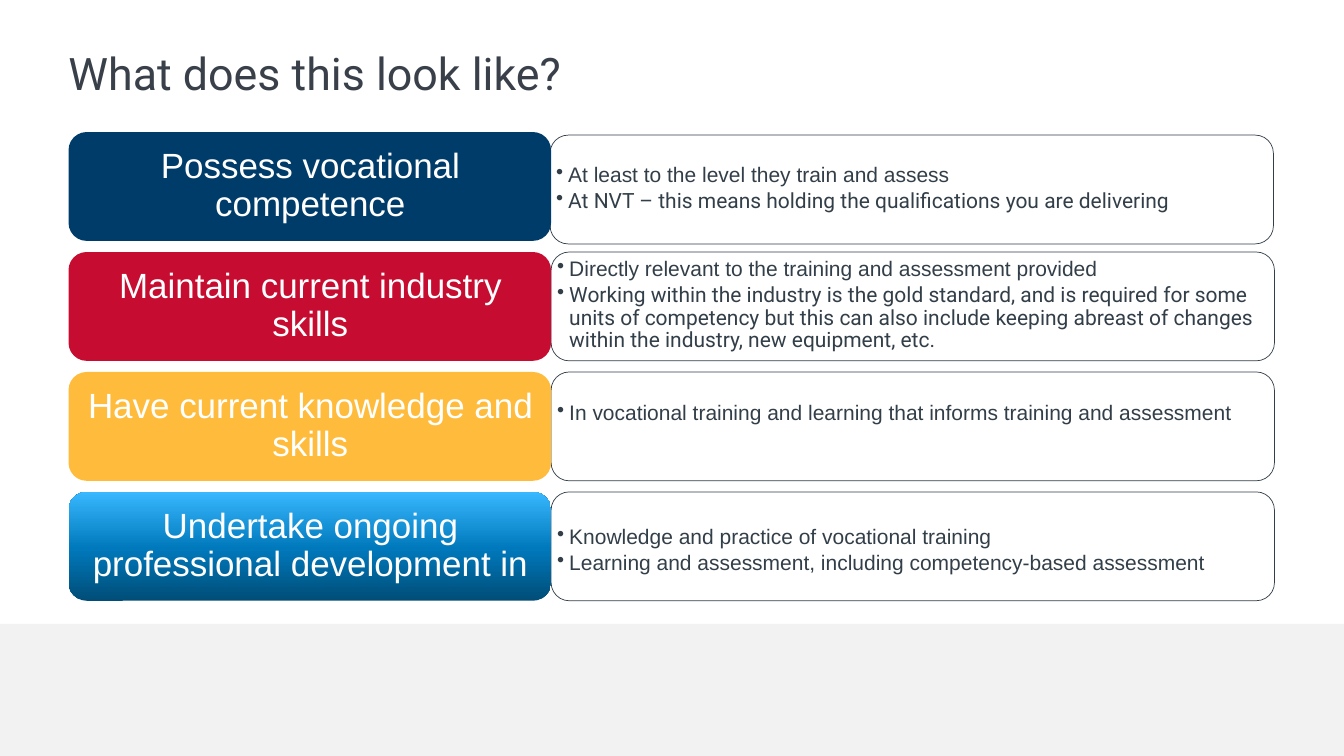
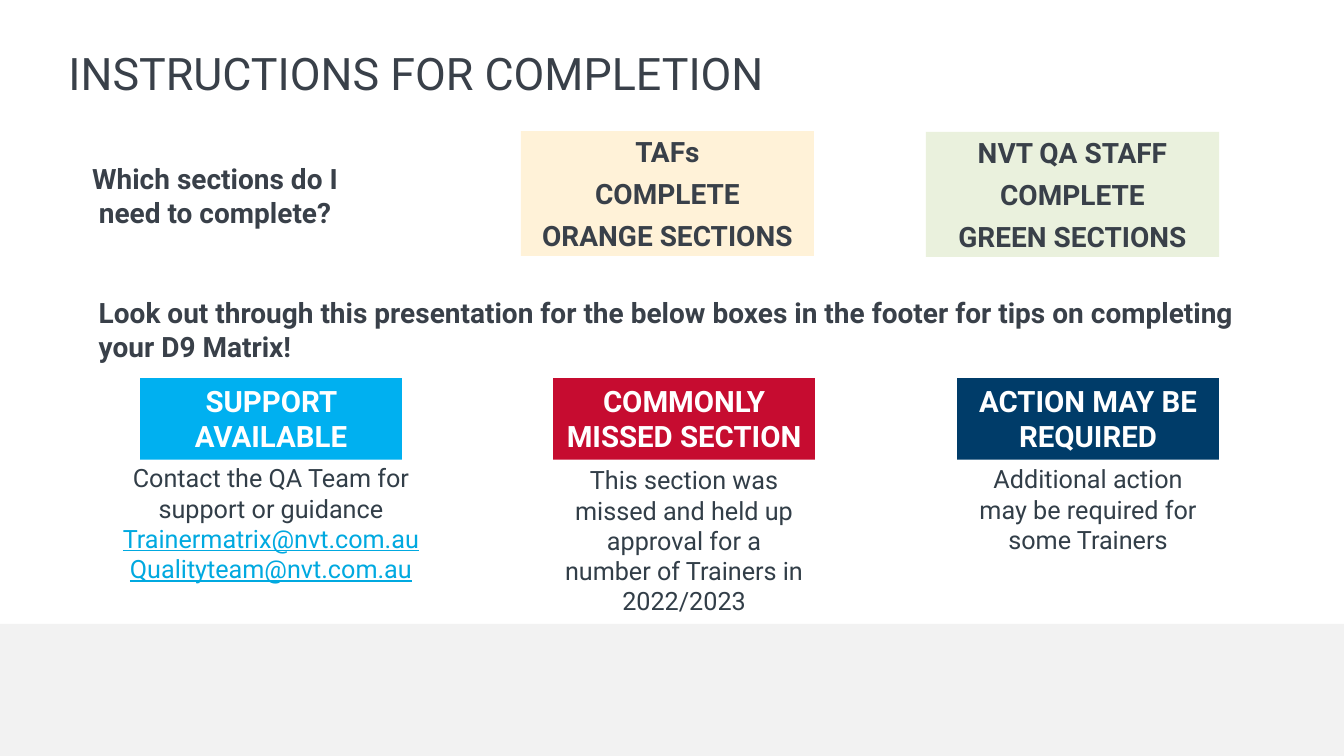
from lxml import etree
from pptx import Presentation
from pptx.dml.color import RGBColor
from pptx.enum import shapes, text
from pptx.oxml.ns import qn
from pptx.util import Inches, Pt

COLORS = {
    "ink": "394049", "body": "323E48", "white": "FFFFFF", "band": "F2F2F2",
    "navy": "003C69", "red": "C60C30", "amber": "FFBC3C", "sky": "00B0F0",
    "link": "00A9E0", "cream": "FFF2D8", "mint": "EAF1DD",
}
BLUE_STOPS = [(0, "004D77"), (48, "0079BC"), (100, "38B8FF")]
SANS, ROBOTO = "Arial", "Roboto"
RECT, ROUNDED = shapes.MSO_SHAPE.RECTANGLE, shapes.MSO_SHAPE.ROUNDED_RECTANGLE
TOP, MIDDLE, BOTTOM = (text.MSO_ANCHOR.TOP, text.MSO_ANCHOR.MIDDLE,
                       text.MSO_ANCHOR.BOTTOM)
LEFT, CENTER = text.PP_ALIGN.LEFT, text.PP_ALIGN.CENTER

# heading, fill (None is the blue gradient), anchor, top inset, (font, point)
REQUIREMENTS = [
    ("Possess vocational competence", "navy", MIDDLE, 0.01, [
        (SANS, "At least to the level they train and assess"),
        (ROBOTO, "At NVT – this means holding the qualifications you are delivering")]),
    ("Maintain current industry skills", "red", TOP, 0.01, [
        (SANS, "Directly relevant to the training and assessment provided"),
        (ROBOTO, "Working within the industry is the gold standard, and is required "
                 "for some units of competency but this can also include keeping "
                 "abreast of changes within the industry, new equipment, etc.")]),
    ("Have current knowledge and skills", "amber", TOP, 0.29, [
        (SANS, "In vocational training and learning that informs training and assessment")]),
    ("Undertake ongoing professional development in", None, TOP, 0.29, [
        (SANS, "Knowledge and practice of vocational training"),
        (SANS, "Learning and assessment, including competency-based assessment")]),
]

# left, top, fill, lines
SECTIONS = [
    (0.68, 1.32, None, ["Which sections do I need to complete?"]),
    (5.17, 1.3, "cream", ["TAFs", "COMPLETE", "ORANGE SECTIONS"]),
    (9.19, 1.31, "mint", ["NVT QA STAFF", "COMPLETE", "GREEN SECTIONS"]),
]
LOOK_OUT = ("Look out through this presentation for the below boxes in the footer "
            "for tips on completing your D9 Matrix!")
LINK = {"color": "link", "underline": True}

# left, fill, label, caption top, caption width, caption paragraphs
TIPS = [
    (1.39, "sky", "SUPPORT AVAILABLE", 4.54, 3.7, [
        "Contact the QA Team for support or guidance",
        ("Trainermatrix@nvt.com.au", LINK), ("Qualityteam@nvt.com.au", LINK)]),
    (5.49, "red", "COMMONLY MISSED SECTION", 4.56, 2.6, [
        "This section was missed and held up approval for a number of Trainers "
        "in 2022/2023"]),
    (9.5, "navy", "ACTION MAY BE REQUIRED", 4.55, 2.6, [
        "Additional action may be required for some Trainers"]),
]


def rgb(name):
    return RGBColor.from_string(COLORS[name])


def add_bullet(p, indent):
    pPr = p._p.get_or_add_pPr()
    pPr.set("marL", str(Inches(indent)))
    pPr.set("indent", str(-Inches(indent)))
    etree.SubElement(pPr, qn("a:buChar")).set("char", "•")


def write(sp, paragraphs, size=20, font=ROBOTO, color="ink", bold=False, align=LEFT,
          anchor=TOP, insets=(0, 0, 0, 0), before=0, after=0, spacing=None, bullet=None):
    """Fill a shape with paragraphs: strings, or (string, run overrides) pairs."""
    tf = sp.text_frame
    tf.word_wrap, tf.vertical_anchor = True, anchor
    (tf.margin_left, tf.margin_top,
     tf.margin_right, tf.margin_bottom) = map(Inches, insets)
    for i, item in enumerate(paragraphs):
        words, own = (item, {}) if isinstance(item, str) else item
        p = tf.add_paragraph() if i else tf.paragraphs[0]
        p.alignment = align
        p.space_before, p.space_after = Pt(before if i else 0), Pt(after)
        if spacing:
            p.line_spacing = spacing
        if bullet:
            add_bullet(p, bullet)
        r = p.add_run()
        r.text = words
        r.font.name, r.font.size = own.get("font", font), Pt(size)
        r.font.bold, r.font.underline = bold, own.get("underline", False)
        r.font.color.rgb = rgb(own.get("color", color))


def add_box(s, left, top, width, height, fill=None, kind=RECT, line=None):
    sp = s.shapes.add_shape(kind, *map(Inches, (left, top, width, height)))
    sp.shadow.inherit = False
    if fill:
        sp.fill.solid()
        sp.fill.fore_color.rgb = rgb(fill)
    else:
        sp.fill.background()
    if line:
        sp.line.color.rgb, sp.line.width = rgb(line), Pt(0.5)
    else:
        sp.line.fill.background()
    return sp


def add_text(s, left, top, width, height, paragraphs, **fmt):
    write(s.shapes.add_textbox(*map(Inches, (left, top, width, height))),
          paragraphs, **fmt)


def fill_gradient(sp, stops):
    """Run the stops from the bottom of the shape to its top."""
    sp.fill.gradient()
    sp.fill.gradient_angle = 90
    stop_list = sp._element.spPr.find(".//" + qn("a:gsLst"))
    for old in list(stop_list):
        stop_list.remove(old)
    for percent, value in stops:
        stop = etree.SubElement(stop_list, qn("a:gs"), pos=str(percent * 1000))
        etree.SubElement(stop, qn("a:srgbClr"), val=value)


def new_slide(prs, title):
    s = prs.slides.add_slide(prs.slide_layouts[6])
    add_box(s, 0, 6.19, 13.34, 1.31, "band")
    add_text(s, 0.68, 0.44, 11.97, 0.55, [title], size=32, anchor=BOTTOM)
    return s


def build_requirements(prs):
    s = new_slide(prs, "What does this look like?")
    height, pitch = 1.08, 1.19
    for i, (heading, fill, anchor, inset, points) in enumerate(REQUIREMENTS):
        top = 1.31 + i * pitch
        left, detail_top = (5.47, top) if i else (5.46, top + 0.03)
        add_box(s, left, detail_top, 7.18, height, "white", ROUNDED, "body")
        add_text(s, left + 0.05, detail_top + 0.05, 7.08, 0.97,
                 [(words, {"font": font}) for font, words in points],
                 size=15, color="body", anchor=anchor, spacing=0.9, after=2.5,
                 insets=(0.01, inset, 0.01, 0.01), bullet=0.12)
        sp = add_box(s, 0.68, top, 4.79, height, fill, ROUNDED)
        if not fill:
            fill_gradient(sp, BLUE_STOPS)
        add_text(s, 0.74, top + 0.05, 4.68, 0.97, [heading], size=25, font=SANS,
                 color="white", align=CENTER, anchor=MIDDLE, spacing=0.9,
                 after=8.75, insets=(0.1, 0.05, 0.1, 0.05))


def build_instructions(prs):
    s = new_slide(prs, "INSTRUCTIONS FOR COMPLETION")
    strong = {"bold": True, "anchor": MIDDLE, "before": 3, "after": 3}
    for left, top, fill, lines in SECTIONS:
        write(add_box(s, left, top, 2.91, 1.24, fill), lines, align=CENTER, **strong)
    add_text(s, 0.98, 2.65, 11.36, 1.24, [LOOK_OUT], **strong)
    width, padded = 2.6, {"align": CENTER, "insets": (0.1, 0.05, 0.1, 0.05)}
    for left, fill, label, top, caption_width, caption in TIPS:
        write(add_box(s, left, 3.75, width, 0.81, fill), [label], size=21,
              color="white", bold=True, **padded)
        add_text(s, left + (width - caption_width) / 2, top, caption_width, 1.62,
                 caption, size=18, color="body", **padded)


def main():
    prs = Presentation()
    prs.slide_width, prs.slide_height = Inches(13.34), Inches(7.5)
    build_requirements(prs)
    build_instructions(prs)
    prs.save("out.pptx")


if __name__ == "__main__":
    main()
